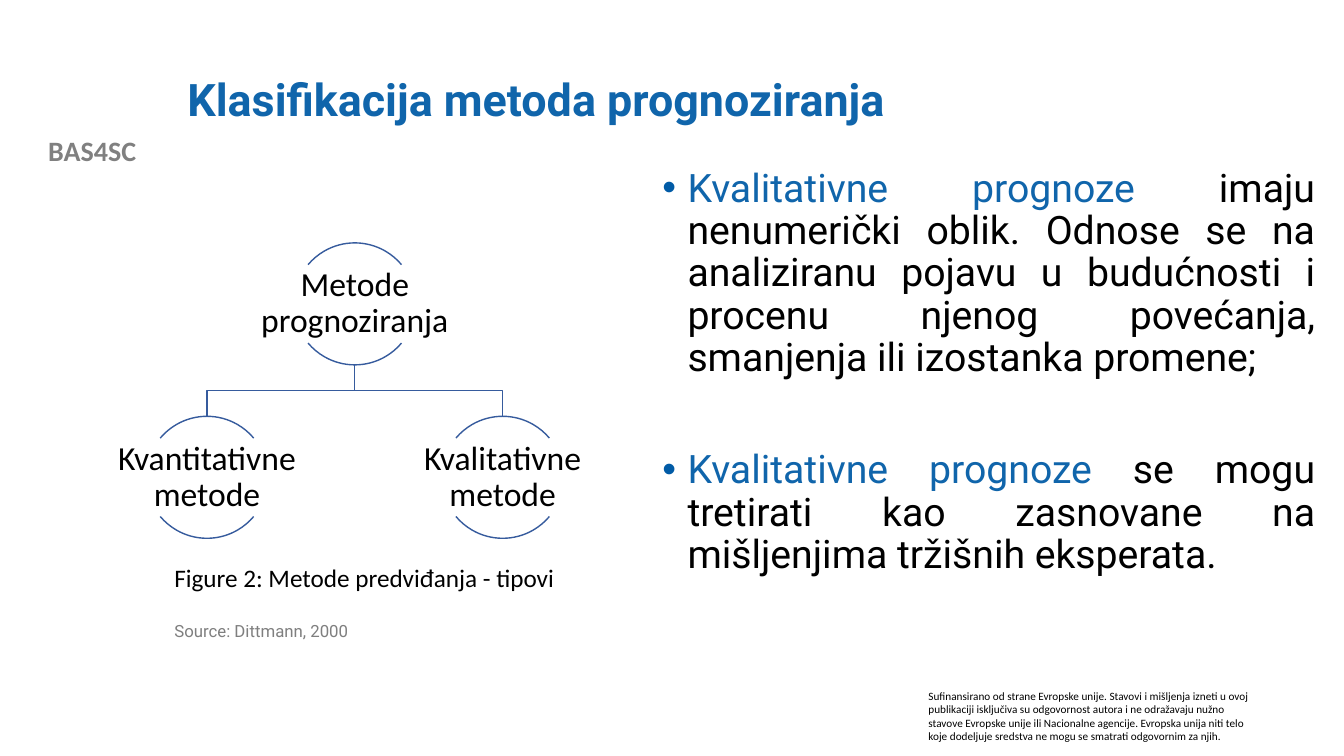
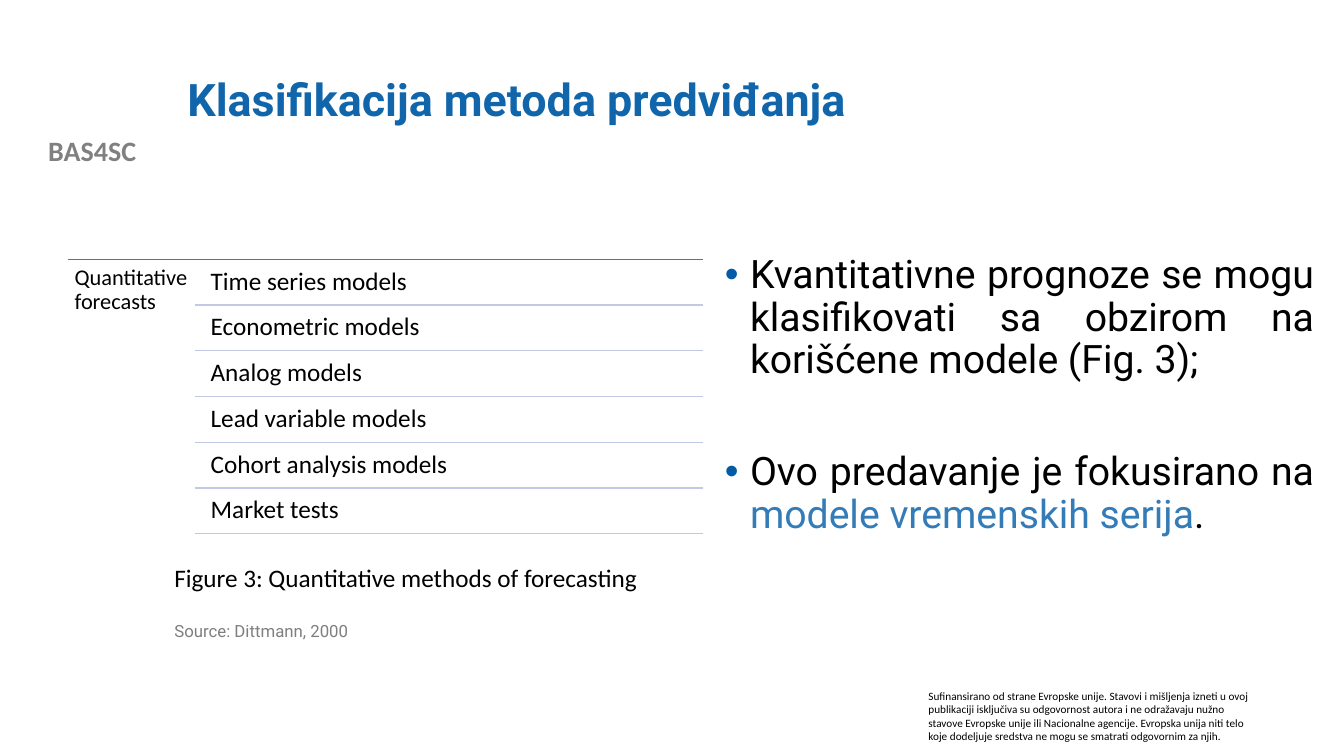
"""Build two slides that classify forecasting methods."""
from dataclasses import dataclass

from lxml.etree import SubElement
from pptx import Presentation
from pptx.dml.color import RGBColor
from pptx.enum.shapes import MSO_CONNECTOR as Connector, MSO_SHAPE as Shape
from pptx.enum.text import MSO_ANCHOR as Anchor, PP_ALIGN as Align
from pptx.oxml.ns import qn
from pptx.util import Inches, Pt


@dataclass(frozen=True)
class Theme:
    heading: str = "Roboto"
    plain: str = "Calibri"
    blue: str = "1065AB"
    light_blue: str = "347CB8"
    bullet: str = "015BA6"
    black: str = "000000"
    tag_grey: str = "808080"
    source_grey: str = "7F7F7F"
    tree_line: str = "365B9D"
    list_top: str = "4472C4"
    list_line: str = "C1C9E4"
    title_size: int = 32
    body_size: int = 28
    node_size: int = 24
    tag_size: int = 20
    caption_size: int = 18
    group_size: int = 16
    source_size: int = 12
    footer_size: int = 8


THEME = Theme()
deck = Presentation()
deck.slide_width, deck.slide_height = Inches(13.33), Inches(7.5)
COLUMN, ROW = deck.slide_width / 100, deck.slide_height / 100


def write_text(page, place, text, *, size, font=THEME.plain, color=THEME.black,
               bold=False, align=Align.LEFT, anchor=Anchor.TOP, spacing=1.0,
               gap=0, inset=None, bullet=None):
    """Write a string, or paragraphs of (text, colour) spans, at a grid place."""
    left, top, width, height = place
    box = page.shapes.add_textbox(int(left * COLUMN), int(top * ROW),
                                  int(width * COLUMN), int(height * ROW))
    frame = box.text_frame
    frame.word_wrap = True
    frame.vertical_anchor = anchor
    if inset is not None:
        frame.margin_left = frame.margin_right = Inches(inset)
        frame.margin_top = frame.margin_bottom = Inches(inset)
    paragraphs = [[(text, color)]] if isinstance(text, str) else text
    for index, spans in enumerate(paragraphs):
        para = frame.add_paragraph() if index else frame.paragraphs[0]
        if bullet:
            props = para._p.get_or_add_pPr()
            props.set("marL", str(Inches(0.25)))
            props.set("indent", str(-Inches(0.25)))
            SubElement(SubElement(props, qn("a:buClr")), qn("a:srgbClr"), val=bullet)
            SubElement(props, qn("a:buFont"), typeface="Arial")
            SubElement(props, qn("a:buChar"), char="•")
        para.alignment = align
        para.line_spacing = spacing
        if index:
            para.space_before = Pt(gap)
        for words, shade in spans:
            span = para.add_run()
            span.text = words
            span.font.name, span.font.size, span.font.bold = font, Pt(size), bold
            span.font.color.rgb = RGBColor.from_string(shade)


def style_line(shape, color):
    """Give a shape or connector a thin flat line."""
    shape.line.color.rgb = RGBColor.from_string(color)
    shape.line.width = Pt(1)
    SubElement(shape._element.spPr, qn("a:effectLst"))


FOOTER = ("Sufinansirano od strane Evropske unije. Stavovi i mišljenja izneti u ovoj "
          "publikaciji isključiva su odgovornost autora i ne odražavaju nužno stavove "
          "Evropske unije ili Nacionalne agencije. Evropska unija niti telo koje "
          "dodeljuje sredstva ne mogu se smatrati odgovornim za njih.")
CONTENT = [
    ("Klasifikacija metoda prognoziranja", "Figure 2: Metode predviđanja - tipovi",
     (48.54, 21.6, 50.04, 63.47),
     [[("Kvalitativne prognoze ", THEME.blue),
       ("imaju nenumerički oblik. Odnose se na analiziranu pojavu u budućnosti i "
        "procenu njenog povećanja, smanjenja ili izostanka promene;", THEME.black)],
      [("Kvalitativne prognoze ", THEME.blue),
       ("se mogu tretirati kao zasnovane na mišljenjima tržišnih eksperata.",
        THEME.black)]]),
    ("Klasifikacija metoda predviđanja", "Figure 3: Quantitative methods of forecasting",
     (53.19, 33.07, 45.31, 48.67),
     [[("Kvantitativne prognoze se mogu klasifikovati sa obzirom na korišćene modele "
        "(Fig. 3);", THEME.black)],
      [("Ovo predavanje je fokusirano na ", THEME.black),
       ("modele vremenskih serija", THEME.light_blue), (".", THEME.black)]]),
]

pages = []
for title, caption, body_place, body in CONTENT:
    page = deck.slides.add_slide(deck.slide_layouts[6])
    pages.append(page)
    write_text(page, (0, 17.07, 13.73, 5.87), "BAS4SC", size=THEME.tag_size,
               color=THEME.tag_grey, bold=True, align=Align.CENTER)
    write_text(page, (68.34, 90.53, 25.43, 8.53), FOOTER, size=THEME.footer_size)
    write_text(page, (13.2, 5.33, 80, 16.27), title, size=THEME.title_size,
               font=THEME.heading, color=THEME.blue, bold=True,
               anchor=Anchor.MIDDLE, spacing=0.9)
    write_text(page, body_place, body, size=THEME.body_size, font=THEME.heading,
               align=Align.JUSTIFY, spacing=0.9, gap=50, bullet=THEME.bullet)
    write_text(page, (12.23, 73.7, 37.2, 5.33), caption, size=THEME.caption_size)
    write_text(page, (12.23, 81.73, 50, 3.73), "Source: Dittmann, 2000",
               size=THEME.source_size, font=THEME.heading,
               color=THEME.source_grey, spacing=0.9)
tree_page, list_page = pages

ROOT_X, BRANCH, ROOT_TOP, LEAF_TOP, DIAMETER = 26.4, 11, 32.13, 55.07, 16.13
LABEL_WIDTH, LABEL_HEIGHT = 18.15, 10.27
root_bottom = ROOT_TOP + DIAMETER
middle = (root_bottom + LEAF_TOP) / 2
for leaf_x in (ROOT_X + BRANCH, ROOT_X - BRANCH):
    points = [(int(x * COLUMN), int(y * ROW)) for x, y in
              [(ROOT_X, root_bottom), (ROOT_X, middle), (leaf_x, middle),
               (leaf_x, LEAF_TOP)]]
    builder = tree_page.shapes.build_freeform(*points[0])
    builder.add_line_segments(points[1:], close=False)
    branch = builder.convert_to_shape()
    branch.fill.background()
    style_line(branch, THEME.tree_line)

for label, center, top in [("Metode prognoziranja", ROOT_X, ROOT_TOP),
                           ("Kvantitativne metode", ROOT_X - BRANCH, LEAF_TOP),
                           ("Kvalitativne metode", ROOT_X + BRANCH, LEAF_TOP)]:
    side = int(DIAMETER * ROW)
    for start, end in [(132, 192), (24, 84)]:
        arc = tree_page.shapes.add_shape(Shape.ARC, int(center * COLUMN - side / 2),
                                         int(top * ROW), side, side)
        arc.adjustments[0], arc.adjustments[1] = start, end
        arc.fill.background()
        style_line(arc, THEME.tree_line)
    write_text(tree_page, (center - LABEL_WIDTH / 2, top + (DIAMETER - LABEL_HEIGHT) / 2,
                           LABEL_WIDTH, LABEL_HEIGHT), label, size=THEME.node_size,
               align=Align.CENTER, anchor=Anchor.MIDDLE, spacing=0.9, inset=0.02)

LIST_LEFT, ITEM_LEFT, LIST_RIGHT, LIST_TOP, PITCH = 5.03, 14.48, 52.29, 34.3, 6.05
MODELS = ["Time series models", "Econometric models", "Analog models",
          "Lead variable models", "Cohort analysis models", "Market tests"]
write_text(list_page, (LIST_LEFT, LIST_TOP, 9.5, PITCH * len(MODELS)),
           "Quantitative forecasts", size=THEME.group_size, spacing=0.9, inset=0.07)
for index, model in enumerate(MODELS):
    write_text(list_page, (15.15, LIST_TOP + PITCH * index + 0.27, 37.13, 5.73), model,
               size=THEME.caption_size, spacing=0.9, inset=0.07)
for index in range(len(MODELS) + 1):
    left, color = (ITEM_LEFT, THEME.list_line) if index else (LIST_LEFT, THEME.list_top)
    height = int((LIST_TOP + PITCH * index) * ROW)
    rule = list_page.shapes.add_connector(Connector.STRAIGHT, int(left * COLUMN), height,
                                          int(LIST_RIGHT * COLUMN), height)
    style_line(rule, color)

deck.save("out.pptx")
